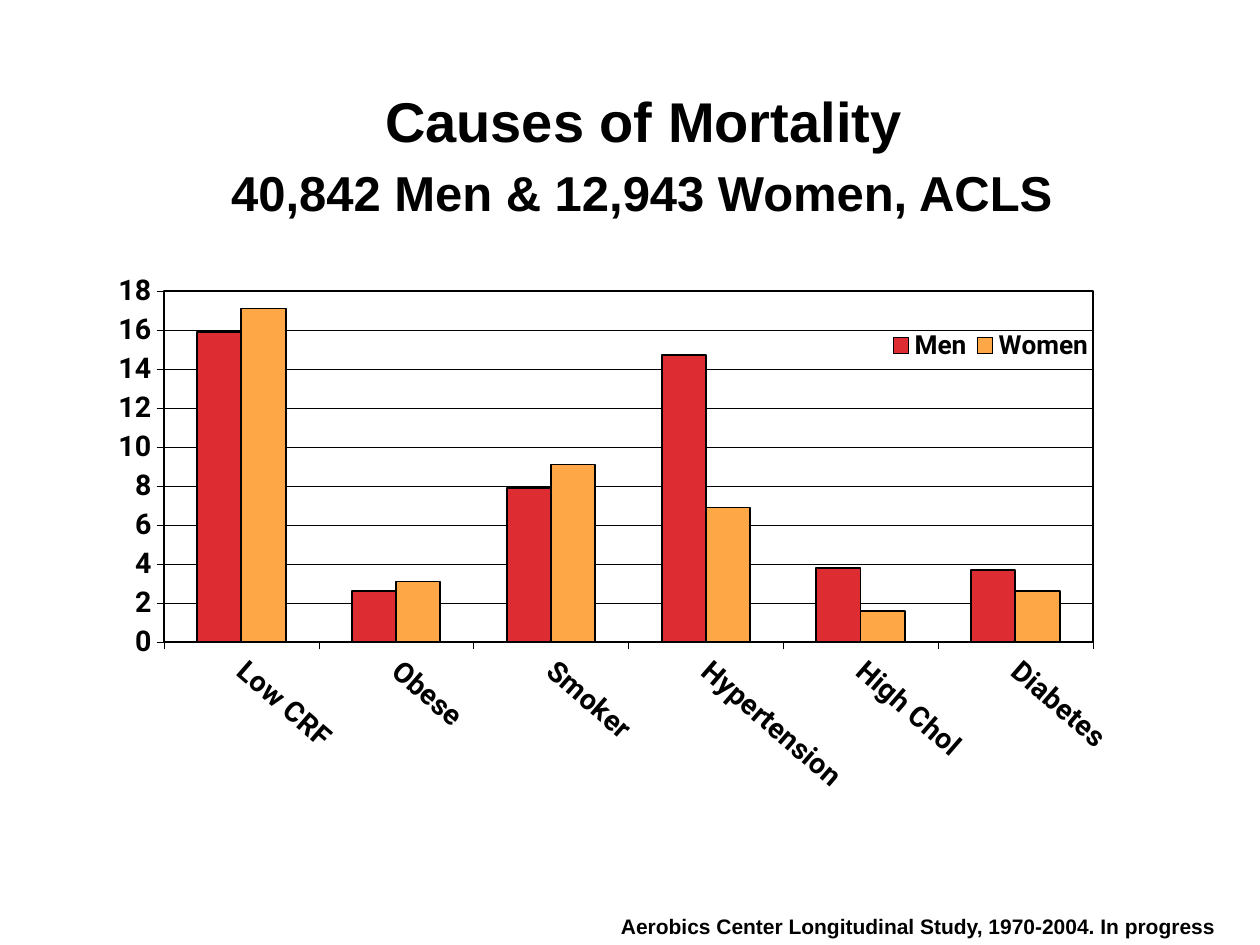
from dataclasses import dataclass

from lxml.etree import SubElement
from pptx import Presentation
from pptx.chart.data import CategoryChartData
from pptx.dml.color import RGBColor
from pptx.enum.chart import XL_CHART_TYPE, XL_LEGEND_POSITION, XL_TICK_MARK
from pptx.enum.text import MSO_ANCHOR, MSO_AUTO_SIZE, PP_ALIGN
from pptx.oxml import parse_xml
from pptx.oxml.ns import nsdecls, qn
from pptx.util import Inches, Pt


@dataclass(frozen=True)
class Theme:
    text_font: str = "Arial"
    chart_font: str = "Roboto"
    ink: str = "000000"
    accent: str = "FFFF00"
    men: str = "DD2D32"
    women: str = "FEA746"
    title_size: float = 32
    subtitle_size: float = 28
    spacer_size: float = 40
    note_size: float = 12
    axis_size: float = 16.3
    legend_size: float = 15
    thin_line: float = 0.25
    bar_line: float = 1.05


def format_font(font, name, size, color):
    font.name = name
    font.size = Pt(size)
    font.bold = True
    font.color.rgb = RGBColor.from_string(color)


def add_text(para, text, **style):
    span = para.add_run()
    span.text = text
    format_font(span.font, **style)


def format_line(line, color, width):
    line.color.rgb = RGBColor.from_string(color)
    line.width = Pt(width)


def set_layout(parent, position, inner=False, **fractions):
    for previous in parent.findall(qn("c:layout")):
        parent.remove(previous)
    layout = parse_xml(f"<c:layout {nsdecls('c')}/>")
    manual = SubElement(layout, qn("c:manualLayout"))
    settings = {"layoutTarget": "inner"} if inner else {}
    settings |= {"xMode": "edge", "yMode": "edge"} | fractions
    for name, value in settings.items():
        SubElement(manual, qn(f"c:{name}")).set("val", str(value))
    parent.insert(position, layout)


class SlideBuilder:
    def __init__(self, page, theme):
        self.page = page
        self.theme = theme

    def title(self, heading, subtitle, left, top, width, height):
        theme = self.theme
        box = self.page.shapes.title
        box.left, box.top, box.width, box.height = map(Inches, (left, top, width, height))
        frame = box.text_frame
        frame.auto_size = MSO_AUTO_SIZE.NONE
        frame.word_wrap = True
        frame.vertical_anchor = MSO_ANCHOR.BOTTOM
        para = frame.paragraphs[0]
        para.alignment = PP_ALIGN.CENTER
        para.line_spacing = 0.85
        add_text(para, heading, name=theme.text_font, size=theme.title_size, color=theme.ink)
        para.add_line_break()
        add_text(para, subtitle, name=theme.text_font, size=theme.subtitle_size, color=theme.ink)
        add_text(para, " ", name=theme.text_font, size=theme.spacer_size, color=theme.accent)

    def note(self, text, left, top, width, height):
        theme = self.theme
        box = self.page.shapes.add_textbox(*map(Inches, (left, top, width, height)))
        box.text_frame.word_wrap = False
        box.text_frame.auto_size = MSO_AUTO_SIZE.SHAPE_TO_FIT_TEXT
        para = box.text_frame.paragraphs[0]
        para.line_spacing = 1.2
        add_text(para, text, name=theme.text_font, size=theme.note_size, color=theme.ink)

    def column_chart(self, categories, series_values, colors, left, top, width, height):
        theme = self.theme
        data = CategoryChartData()
        data.categories = categories
        for name, values in series_values.items():
            data.add_series(name, values)
        frame = self.page.shapes.add_chart(
            XL_CHART_TYPE.COLUMN_CLUSTERED, *map(Inches, (left, top, width, height)), data
        )
        chart = frame.chart
        chart.has_title = False
        format_font(chart.font, theme.chart_font, theme.axis_size, theme.ink)
        plot = chart.plots[0]
        plot.gap_width = 150
        plot.overlap = 0
        plot.vary_by_categories = False
        for series, color in zip(plot.series, colors):
            series.format.fill.solid()
            series.format.fill.fore_color.rgb = RGBColor.from_string(color)
            format_line(series.format.line, theme.ink, theme.bar_line)
        self.axes(chart)
        self.plot_area(chart)
        self.legend(chart)

    def axes(self, chart):
        theme = self.theme
        for axis in (chart.category_axis, chart.value_axis):
            axis.major_tick_mark = XL_TICK_MARK.OUTSIDE
            axis.minor_tick_mark = XL_TICK_MARK.NONE
            format_line(axis.format.line, theme.ink, theme.thin_line)
            format_font(axis.tick_labels.font, theme.chart_font, theme.axis_size, theme.ink)
        labels = chart.category_axis._element.find(qn("c:txPr"))
        labels.find(qn("a:bodyPr")).set("rot", str(41 * 60000))
        scale = chart.value_axis
        scale.minimum_scale, scale.maximum_scale, scale.major_unit = 0, 18, 2
        scale.has_major_gridlines = True
        format_line(scale.major_gridlines.format.line, theme.ink, theme.thin_line)

    def plot_area(self, chart):
        theme = self.theme
        area = chart._chartSpace.chart.plotArea
        set_layout(area, 0, inner=True, x=0.071, y=0.077, w=0.645, h=0.537)
        area.append(parse_xml(
            f"<c:spPr {nsdecls('c', 'a')}><a:noFill/>"
            f'<a:ln w="{Pt(theme.bar_line)}"><a:solidFill>'
            f'<a:srgbClr val="{theme.ink}"/></a:solidFill></a:ln></c:spPr>'
        ))

    def legend(self, chart):
        theme = self.theme
        chart.has_legend = True
        legend = chart.legend
        legend.position = XL_LEGEND_POSITION.RIGHT
        legend.include_in_layout = False
        format_font(legend.font, theme.chart_font, theme.legend_size, theme.ink)
        set_layout(legend._element, 1, x=0.57, y=0.13, w=0.15, h=0.06)


def main():
    deck = Presentation()
    deck.slide_width, deck.slide_height = Inches(10), Inches(7.5)
    theme = Theme()
    builder = SlideBuilder(deck.slides.add_slide(deck.slide_layouts[5]), theme)
    builder.title(
        "Causes of Mortality ", "40,842 Men & 12,943 Women, ACLS",
        left=0.67, top=0.42, width=9, height=1.42,
    )
    builder.column_chart(
        ["Low CRF", "Obese", "Smoker", "Hypertension", "High Chol", "Diabetes"],
        {
            "Men": [15.9, 2.6, 7.9, 14.7, 3.8, 3.7],
            "Women": [17.1, 3.1, 9.1, 6.9, 1.6, 2.6],
        },
        [theme.men, theme.women],
        left=0.49, top=1.91, width=11.43, height=5.19,
    )
    builder.note(
        "Aerobics Center Longitudinal Study, 1970-2004. In progress",
        left=4.83, top=7.16, width=4.94, height=0.34,
    )
    deck.save("out.pptx")


if __name__ == "__main__":
    main()
